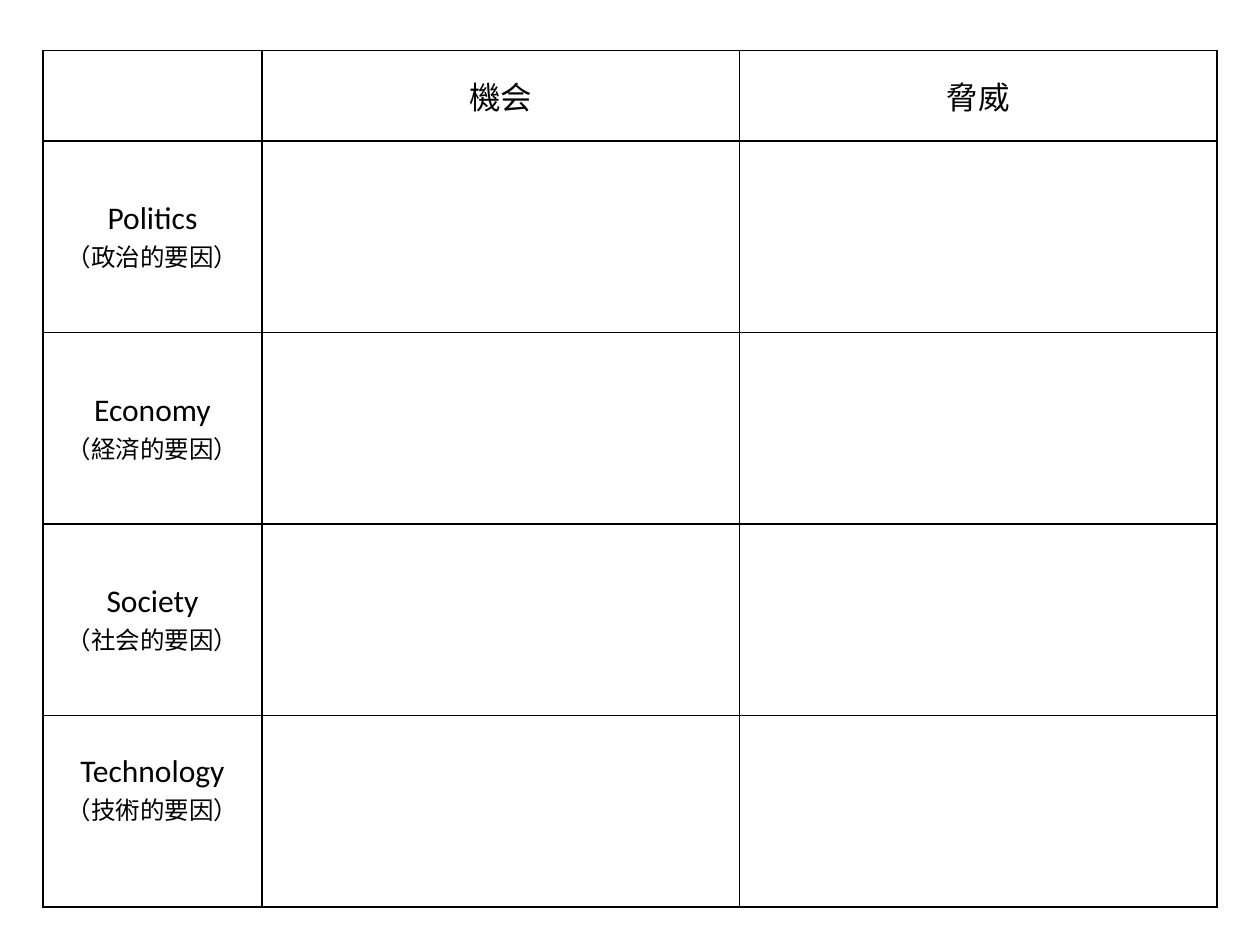
from lxml import etree
from pptx import Presentation
from pptx.dml.color import RGBColor
from pptx.enum.text import MSO_ANCHOR, PP_ALIGN
from pptx.oxml.ns import qn
from pptx.util import Inches, Pt

BLACK = RGBColor(0x00, 0x00, 0x00)

HEADERS = ["機会", "脅威"]
FACTORS = [
    ("Politics", "（政治的要因）"),
    ("Economy", "（経済的要因）"),
    ("Society", "（社会的要因）"),
    ("Technology", "（技術的要因）"),
]


class PestSlide:
    FONT = "Calibri"
    HEAD_SIZE, NOTE_SIZE = 18, 14
    BORDER = Pt(1)

    def __init__(self, prs):
        self.slide = prs.slides.add_slide(prs.slide_layouts[6])

    def table(self, left, top, col_widths, row_heights):
        """Add a plain, bordered table; lengths are in inches."""
        frame = self.slide.shapes.add_table(
            len(row_heights), len(col_widths), Inches(left), Inches(top),
            Inches(sum(col_widths)), Inches(sum(row_heights)))
        table = frame.table
        table.first_row = table.horz_banding = False
        for column, width in zip(table.columns, col_widths):
            column.width = Inches(width)
        for row, height in zip(table.rows, row_heights):
            row.height = Inches(height)
        for cell in table.iter_cells():
            self.borders(cell)
            cell.fill.background()
        return table

    def borders(self, cell):
        tc_pr = cell._tc.get_or_add_tcPr()
        for side in ("lnL", "lnR", "lnT", "lnB"):
            ln = etree.SubElement(tc_pr, qn(f"a:{side}"), w=str(self.BORDER))
            fill = etree.SubElement(ln, qn("a:solidFill"))
            etree.SubElement(fill, qn("a:srgbClr"), val=str(BLACK))

    def label(self, cell, heading, note=None):
        """Centre a heading in a cell, with an optional smaller line below."""
        cell.vertical_anchor = MSO_ANCHOR.MIDDLE
        tf = cell.text_frame
        self.line(tf.paragraphs[0], heading, self.HEAD_SIZE)
        if note:
            self.line(tf.add_paragraph(), note, self.NOTE_SIZE)

    def line(self, p, text, size):
        p.text = text
        p.alignment = PP_ALIGN.CENTER
        p.font.name = self.FONT
        p.font.size = Pt(size)
        p.font.color.rgb = BLACK


def main():
    prs = Presentation()
    prs.slide_width, prs.slide_height = Inches(10), Inches(7.5)
    pest = PestSlide(prs)

    # Grid: one label column and row, then equal cells
    table = pest.table(0.34, 0.4, [1.74] + [3.79] * len(HEADERS),
                       [0.72] + [1.52] * len(FACTORS))

    # Column headings
    for col, heading in enumerate(HEADERS, 1):
        pest.label(table.cell(0, col), heading)

    # Row labels
    for row, (heading, note) in enumerate(FACTORS, 1):
        pest.label(table.cell(row, 0), heading, note)

    # The last label sits a little higher in its cell
    table.cell(len(FACTORS), 0).margin_bottom = Inches(0.4)

    prs.save("out.pptx")


if __name__ == "__main__":
    main()
